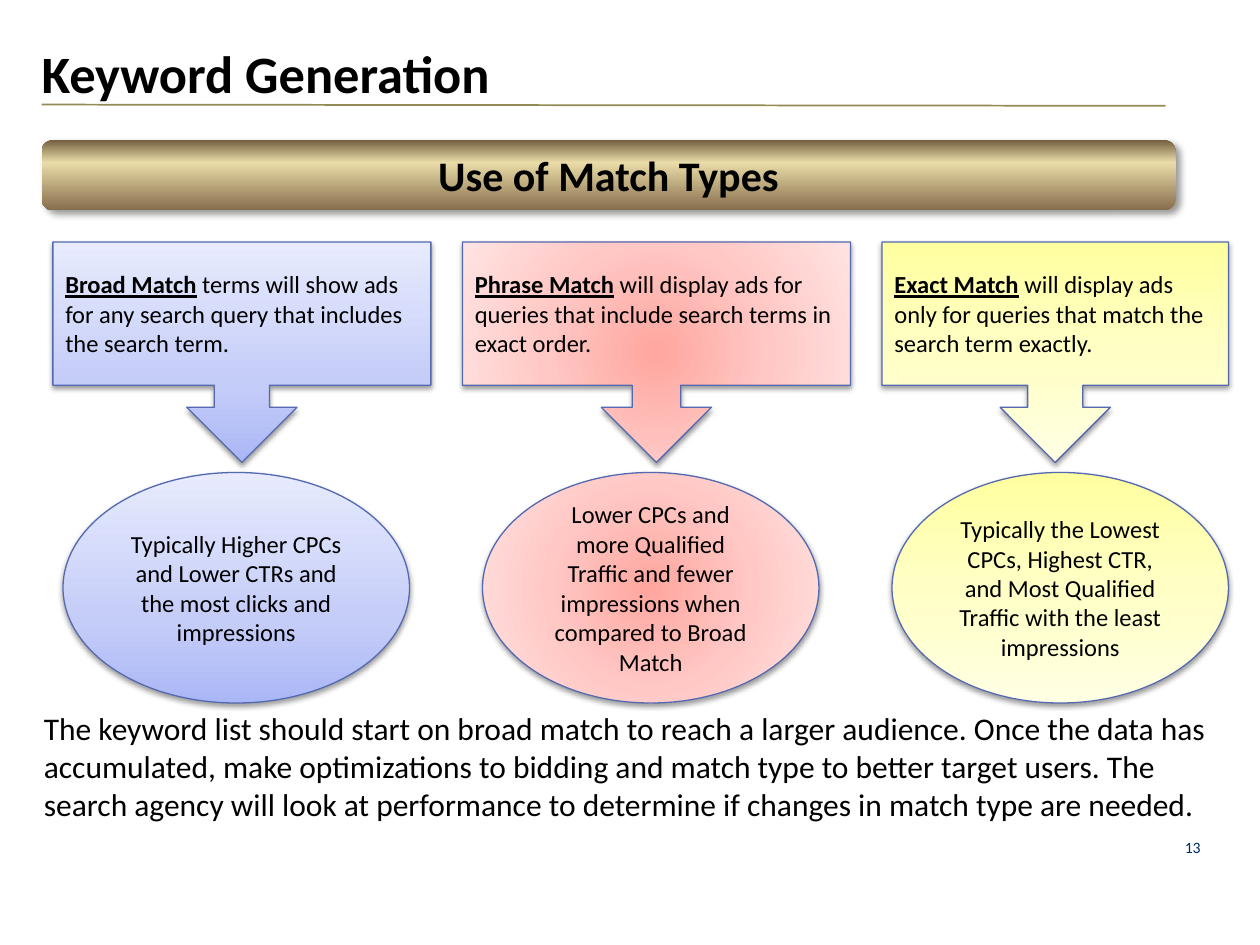
from lxml.etree import SubElement
from pptx import Presentation
from pptx.dml.color import RGBColor
from pptx.enum.shapes import MSO_CONNECTOR, MSO_SHAPE
from pptx.enum.text import MSO_ANCHOR, MSO_AUTO_SIZE, PP_ALIGN
from pptx.oxml import parse_xml
from pptx.oxml.ns import nsdecls, qn
from pptx.util import Inches, Pt

BLUE = dict(stops=[(0, "AAB7F6"), (35, "C4CCF8"), (100, "E7EBFD")], angle=270)
RED = dict(stops=[(0, "FFA69F"), (50, "FFC8C5"), (100, "FFE4E3")])
YELLOW = dict(stops=[(0, "FFFFA0"), (50, "FFFFC5"), (100, "FFFFE3")], angle=90)
GOLD = dict(stops=[(0, "735E40"), (32, "EADCA8"), (100, "866D4C")], angle=90)
SOFT = dict(alpha=38, blur=3.1, dist=1.6, angle=90)
DEEP = dict(alpha=40, blur=4, dist=3, angle=45)

MATCH_TYPES = [
    (BLUE, (0.42, 3), (0.5, 2.75), None, "Broad Match",
     " terms will show ads for any search query that includes the search term.",
     "Typically Higher CPCs and Lower CTRs and the most clicks and impressions"),
    (RED, (3.67, 3.08), (3.83, 2.67), 0.22, "Phrase Match",
     " will display ads for queries that include search terms in exact order.",
     "Lower CPCs and more Qualified Traffic and fewer impressions when compared to Broad Match"),
    (YELLOW, (7, 2.75), (7.08, 2.67), None, "Exact Match",
     " will display ads only for queries that match the search term exactly.",
     "Typically the Lowest CPCs, Highest CTR, and Most Qualified Traffic with the least impressions"),
]


def rgb(value):
    return RGBColor.from_string(value)


class Deck:
    font = "Calibri"
    ink = "000000"
    outline = "5469B0"

    def __init__(self, prs):
        self.s = prs.slides.add_slide(prs.slide_layouts[5])

    def fill_text(self, tf, parts, size, align=PP_ALIGN.LEFT, color=None,
                  anchor=MSO_ANCHOR.MIDDLE, inset=None):
        tf.word_wrap = True
        tf.vertical_anchor = anchor
        if inset is not None:
            tf.margin_left = tf.margin_right = Inches(inset)
            tf.margin_top = tf.margin_bottom = Inches(inset)
        p = tf.paragraphs[0]
        p.alignment = align
        for text, bold, underline in parts:
            r = p.add_run()
            r.text = text
            r.font.name = self.font
            r.font.size = Pt(size)
            r.font.bold = bold
            r.font.underline = underline
            r.font.color.rgb = rgb(color or self.ink)
        return p

    def title(self, text, box):
        sp = self.s.shapes.title
        sp.left, sp.top, sp.width, sp.height = map(Inches, box)
        p = self.fill_text(sp.text_frame, [(text, True, False)], 30,
                           anchor=MSO_ANCHOR.BOTTOM, inset=0)
        p.line_spacing = 0.9
        sp.text_frame.auto_size = MSO_AUTO_SIZE.NONE

    def rule(self, x1, y1, x2, y2, color):
        line = self.s.shapes.add_connector(
            MSO_CONNECTOR.STRAIGHT, *map(Inches, (x1, y1, x2, y2)))
        line.line.color.rgb = rgb(color)
        line.line.width = Pt(1)
        SubElement(line._element.spPr, qn("a:effectLst"))

    def text(self, text, box, size, **style):
        tb = self.s.shapes.add_textbox(*map(Inches, box))
        self.fill_text(tb.text_frame, [(text, False, False)], size, **style)

    def gradient(self, sp, stops, angle=None):
        gs = "".join(f'<a:gs pos="{pos * 1000}"><a:srgbClr val="{color}"/></a:gs>'
                     for pos, color in stops)
        if angle is None:
            shade = ('<a:path path="circle"><a:fillToRect l="50000" t="50000" '
                     'r="50000" b="50000"/></a:path>')
        else:
            shade = f'<a:lin ang="{angle * 60000}" scaled="0"/>'
        sp._element.spPr.insert(2, parse_xml(
            f'<a:gradFill {nsdecls("a")} rotWithShape="1">'
            f'<a:gsLst>{gs}</a:gsLst>{shade}</a:gradFill>'))

    def shadow(self, sp, alpha, blur, dist, angle):
        sp.shadow.inherit = False
        sp._element.spPr.find(qn("a:effectLst")).append(parse_xml(
            f'<a:outerShdw {nsdecls("a")} blurRad="{Pt(blur)}" dist="{Pt(dist)}" '
            f'dir="{angle * 60000}" algn="ctr" rotWithShape="0"><a:srgbClr val="000000">'
            f'<a:alpha val="{alpha * 1000}"/></a:srgbClr></a:outerShdw>'))

    def shape(self, kind, box, fill, parts, size, align, shadow=SOFT,
              outlined=True, inset=0.1):
        sp = self.s.shapes.add_shape(kind, *map(Inches, box))
        self.gradient(sp, **fill)
        if outlined:
            sp.line.color.rgb = rgb(self.outline)
            sp.line.width = Pt(0.75)
        else:
            sp.line.fill.background()
        self.shadow(sp, **shadow)
        self.fill_text(sp.text_frame, parts, size, align, inset=inset)
        return sp


def main():
    prs = Presentation()
    prs.slide_width, prs.slide_height = Inches(10), Inches(7.5)
    deck = Deck(prs)
    deck.rule(0.33, 0.83, 9.25, 0.84, "948A54")
    deck.title("Keyword Generation", (0.33, 0.33, 9.42, 0.5))
    deck.shape(MSO_SHAPE.ROUNDED_RECTANGLE, (0.33, 1.11, 9, 0.56), GOLD,
               [("Use of Match Types", True, False)], 24, PP_ALIGN.CENTER,
               shadow=DEEP, outlined=False, inset=None)
    for fill, (cx, cw), (ex, ew), stem, name, rest, effect in MATCH_TYPES:
        deck.shape(MSO_SHAPE.OVAL, (ex, 3.75, ew, 1.83), fill,
                   [(effect, False, False)], 14, PP_ALIGN.CENTER)
        callout = deck.shape(MSO_SHAPE.DOWN_ARROW_CALLOUT, (cx, 1.92, cw, 1.75), fill,
                             [(name, True, True), (rest, False, False)], 14, PP_ALIGN.LEFT)
        if stem:
            callout.adjustments[0] = stem
    deck.text("The keyword list should start on broad match to reach a larger audience. "
              "Once the data has accumulated, make optimizations to bidding and match type "
              "to better target users. The search agency will look at performance to "
              "determine if changes in match type are needed.",
              (0.25, 5.58, 9.5, 1.01), 18, anchor=MSO_ANCHOR.TOP)
    deck.text("13", (9.33, 6.58, 0.2, 0.22), 9, align=PP_ALIGN.RIGHT,
              color="002C69", anchor=MSO_ANCHOR.BOTTOM, inset=0)
    prs.save("out.pptx")


if __name__ == "__main__":
    main()
